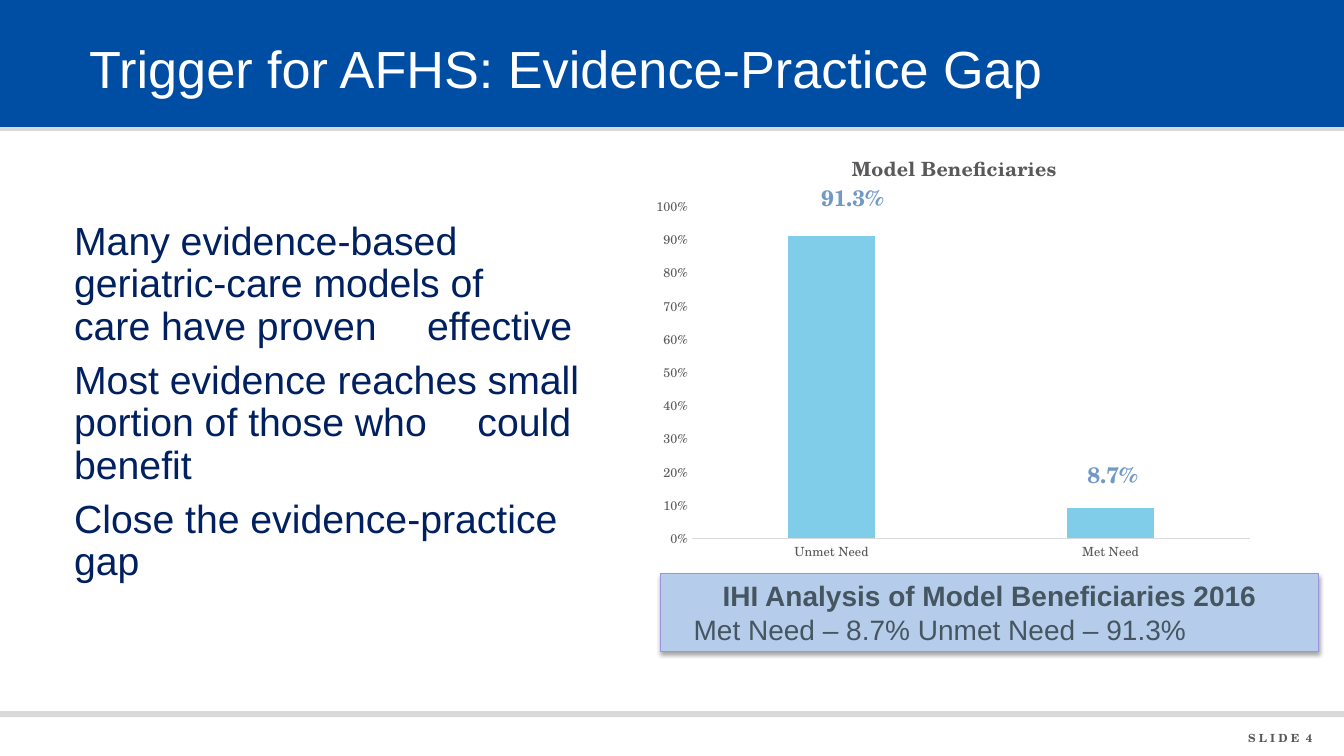
import pptx
import pptx.util
import pptx.dml.color
import pptx.chart.data
import pptx.enum.chart
import pptx.enum.shapes
import pptx.enum.text
import pptx.oxml
import pptx.oxml.ns
from dataclasses import dataclass

Pt = pptx.util.Pt
ALIGN = pptx.enum.text.PP_ALIGN
ANCHOR = pptx.enum.text.MSO_ANCHOR


@dataclass(frozen=True)
class Theme:
    sans: str = "Arial"
    serif: str = "TeX Gyre Schola"
    blue: str = "004DA4"
    rule: str = "DAD9D9"
    white: str = "FFFFFF"
    navy: str = "002060"
    footer: str = "585858"
    axis: str = "595959"
    axis_line: str = "D9D9D9"
    bar: str = "80CDE9"
    value: str = "7299C6"
    note_fill: str = "B5CCEB"
    note_line: str = "9B93E1"
    note_text: str = "455660"
    title_size: float = 37.3
    body_size: float = 28
    note_size: float = 20
    value_size: float = 16
    chart_title_size: float = 14
    axis_size: float = 9
    footer_size: float = 8


T = Theme()

TITLE = "Trigger for AFHS: Evidence-Practice Gap"
BODY = [
    "Many evidence-based \tgeriatric-care models of \tcare have proven \teffective",
    "Most evidence reaches small \tportion of those who \tcould benefit",
    "Close the evidence-practice \tgap",
]
CHART_TITLE = "Model Beneficiaries"
NEEDS = {"Unmet Need": 0.91, "Met Need": 0.09}
VALUE_LABELS = [
    ("91.3%", (58.14, 23.73, 10.58, 4.93)),
    ("8.7%", (77.64, 60.4, 10.28, 4.93)),
]
NOTE_HEAD = "IHI Analysis of Model Beneficiaries 2016"
NOTE_LINE = "Met Need – 8.7% Unmet Need – 91.3%"
FOOTER = ("S L I D E", " ", "4")

BANDS = [
    ((0, 14, 100, 3.33), T.rule),
    ((0, 0, 100, 16.8), T.blue),
    ((0, 94.07, 100, 0.8), T.rule),
]
TITLE_BOX = (5.9, 2.27, 88.97, 13.33)
BODY_BOX = (4.78, 28.67, 39.9, 65.07)
CHART_BOX = (47.94, 17.73, 45.99, 57.73)
NOTE_BOX = (49.14, 75.87, 48.99, 10.27)
FOOTER_BOX = (84.2, 96.1, 14.18, 3.07)
PLOT_SHARE = {"x": 0.077, "y": 0.166, "w": 0.903, "h": 0.76}
CHART_TITLE_SHARE = {"x": 0.33, "y": 0.03}

prs = pptx.Presentation()
prs.slide_width = pptx.util.Inches(13.33)
prs.slide_height = pptx.util.Inches(7.5)
s = prs.slides.add_slide(prs.slide_layouts[6])


def place(box):
    sides = (prs.slide_width, prs.slide_height) * 2
    return [int(share * side / 100) for share, side in zip(box, sides)]


def rgb(value):
    return pptx.dml.color.RGBColor.from_string(value)


def style(font, name, size, color, bold=False):
    font.name, font.size, font.bold = name, Pt(size), bold
    font.color.rgb = rgb(color)


def xml(tag, inner, prefix="a"):
    ns = pptx.oxml.ns.nsdecls(prefix)
    return pptx.oxml.parse_xml(f"<{prefix}:{tag} {ns}>{inner}</{prefix}:{tag}>")


def add_rect(box, fill):
    sp = s.shapes.add_shape(pptx.enum.shapes.MSO_SHAPE.RECTANGLE, *place(box))
    sp.shadow.inherit = False
    sp.fill.solid()
    sp.fill.fore_color.rgb = rgb(fill)
    sp.line.fill.background()
    return sp


def write(tf, lines, name, size, color, bold=False, align=ALIGN.LEFT, anchor=ANCHOR.TOP):
    tf.word_wrap = True
    tf.vertical_anchor = anchor
    for i, runs in enumerate(lines):
        p = tf.paragraphs[0] if i == 0 else tf.add_paragraph()
        p.alignment = align
        for text in [runs] if isinstance(runs, str) else runs:
            r = p.add_run()
            r.text = text
            style(r.font, name, size, color, bold)


def add_text(box, lines, *args, **kwargs):
    tf = s.shapes.add_textbox(*place(box)).text_frame
    write(tf, lines, *args, **kwargs)
    return tf


def set_layout(element, shares, target=""):
    old = element.find(pptx.oxml.ns.qn("c:layout"))
    if old is not None:
        element.remove(old)
    modes = "".join(f'<c:{k}Mode val="edge"/>' for k in "xy")
    values = "".join(f'<c:{k} val="{v}"/>' for k, v in shares.items())
    layout = xml("layout", f"<c:manualLayout>{target}{modes}{values}</c:manualLayout>", "c")
    tx = element.find(pptx.oxml.ns.qn("c:tx"))
    if tx is None:
        element.insert(0, layout)
    else:
        tx.addnext(layout)


def add_needs_chart():
    data = pptx.chart.data.CategoryChartData(number_format="0%")
    data.categories = list(NEEDS)
    data.add_series("Series 1", list(NEEDS.values()))
    kind = pptx.enum.chart.XL_CHART_TYPE.COLUMN_CLUSTERED
    chart = s.shapes.add_chart(kind, *place(CHART_BOX), data).chart
    style(chart.font, T.serif, T.axis_size, T.axis)
    chart.has_legend = False
    chart.has_title = True
    r = chart.chart_title.text_frame.paragraphs[0].add_run()
    r.text = CHART_TITLE
    style(r.font, T.serif, T.chart_title_size, T.axis, True)
    set_layout(chart.chart_title._element, CHART_TITLE_SHARE)
    plot = chart.plots[0]
    plot.gap_width, plot.overlap, plot.vary_by_categories = 219, -27, False
    bars = plot.series[0].format.fill
    bars.solid()
    bars.fore_color.rgb = rgb(T.bar)
    for axis in (chart.category_axis, chart.value_axis):
        axis.has_major_gridlines = False
        axis.major_tick_mark = pptx.enum.chart.XL_TICK_MARK.NONE
        style(axis.tick_labels.font, T.serif, T.axis_size, T.axis)
    chart.category_axis.format.line.color.rgb = rgb(T.axis_line)
    chart.category_axis.format.line.width = Pt(0.75)
    values = chart.value_axis
    values.format.line.fill.background()
    values.minimum_scale, values.maximum_scale, values.major_unit = 0, 1, 0.1
    values.tick_labels.number_format = "0%"
    values.tick_labels.number_format_is_linked = False
    area = chart._chartSpace.chart.plotArea
    set_layout(area, PLOT_SHARE, '<c:layoutTarget val="inner"/>')


def add_note():
    sp = add_rect(NOTE_BOX, T.note_fill)
    sp.line.color.rgb = rgb(T.note_line)
    sp.line.width = Pt(0.75)
    effects = sp._element.spPr.find(pptx.oxml.ns.qn("a:effectLst"))
    shadow = xml("outerShdw", '<a:srgbClr val="000000"><a:alpha val="35000"/></a:srgbClr>')
    for key, value in (("blurRad", Pt(3.1)), ("dist", Pt(1.8)), ("dir", 90 * 60000)):
        shadow.set(key, str(int(value)))
    shadow.set("rotWithShape", "0")
    effects.append(shadow)
    write(sp.text_frame, [NOTE_HEAD, NOTE_LINE], T.sans, T.note_size, T.note_text,
          align=ALIGN.CENTER)
    head, line = sp.text_frame.paragraphs
    head.runs[0].font.bold = True
    line.alignment = ALIGN.LEFT
    line._p.get_or_add_pPr().set("marL", str(pptx.util.Inches(0.23)))


for box, fill in BANDS:
    add_rect(box, fill)
footer = add_text(FOOTER_BOX, [FOOTER], T.serif, T.footer_size, T.footer, True, ALIGN.RIGHT)
footer.paragraphs[0].runs[1]._r.get_or_add_rPr().set("spc", "220")
add_text(TITLE_BOX, [TITLE], T.sans, T.title_size, T.white, anchor=ANCHOR.MIDDLE)
body = add_text(BODY_BOX, BODY, T.sans, T.body_size, T.navy)
for i, p in enumerate(body.paragraphs):
    p.line_spacing = 0.9
    p.space_before = Pt(0.3 * T.body_size if i else 0)
add_needs_chart()
for label, box in VALUE_LABELS:
    add_text(box, [label], T.serif, T.value_size, T.value, True, ALIGN.CENTER)
add_note()

prs.save("out.pptx")
